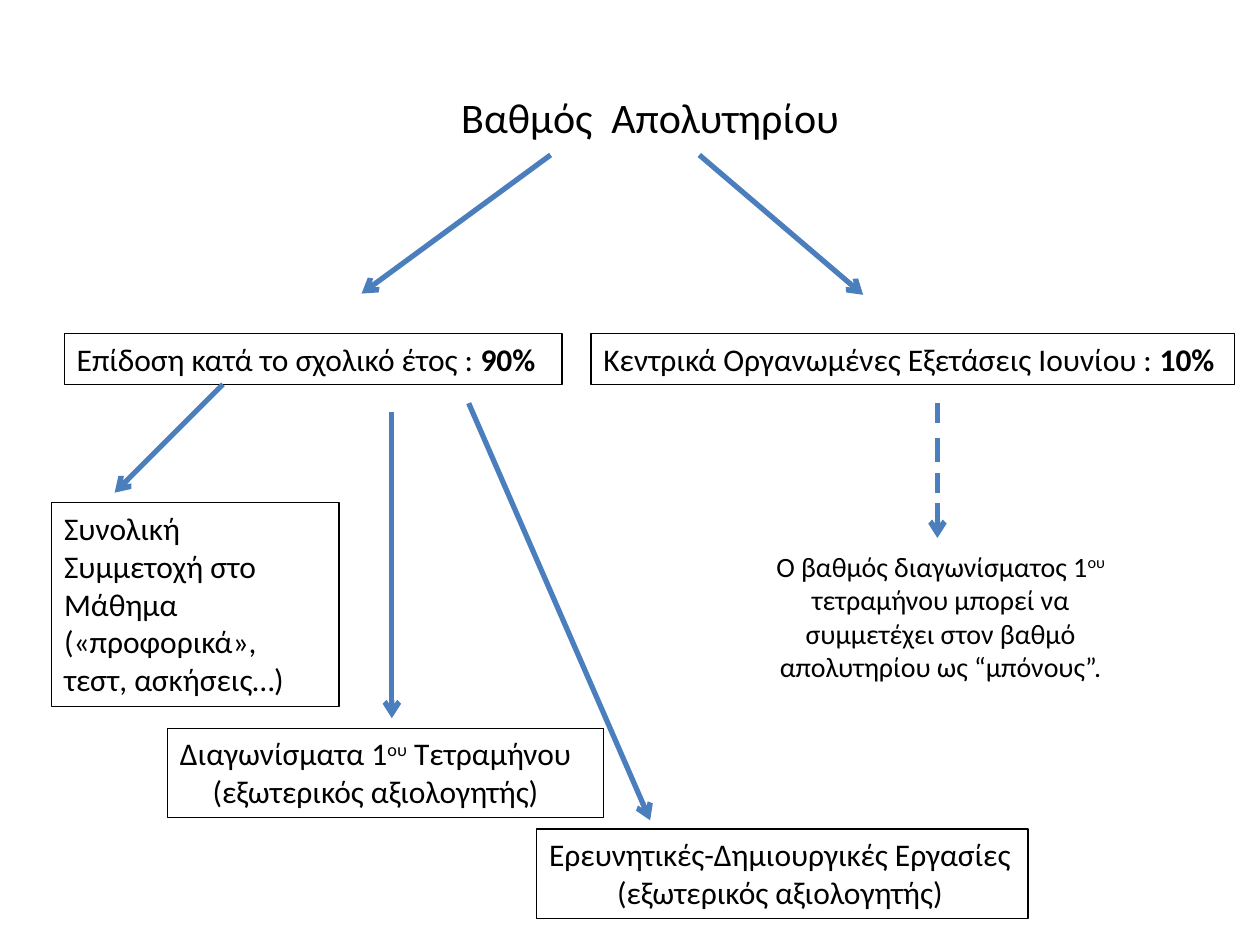
from lxml import etree
from pptx import Presentation
from pptx.dml.color import RGBColor
from pptx.enum.shapes import MSO_CONNECTOR
from pptx.enum.text import MSO_ANCHOR, MSO_AUTO_SIZE, PP_ALIGN
from pptx.oxml.ns import qn
from pptx.util import Inches, Pt

STRAIGHT = MSO_CONNECTOR.STRAIGHT
LEFT, CENTER = PP_ALIGN.LEFT, PP_ALIGN.CENTER
TOP, MIDDLE = MSO_ANCHOR.TOP, MSO_ANCHOR.MIDDLE
FIT, FIXED = MSO_AUTO_SIZE.SHAPE_TO_FIT_TEXT, MSO_AUTO_SIZE.NONE

FONT, INK, BLUE = "Calibri", "000000", "4B7EBC"
BOX_SIZE, NOTE_SIZE, TITLE_SIZE = 18, 16, 24

# A paragraph is (alignment, runs); a run is (text, style).
TITLE = [(CENTER, [("Βαθμός  Απολυτηρίου", "")])]
TITLE_AT = (3.35, 0.68, 3.62, 0.5)
ASSESSOR = (CENTER, [("(εξωτερικός αξιολογητής)", "")])

# place, wraps, paragraphs
BOXES = [
    ((0.51, 2.65, 3.95, 0.4), False,
     [(LEFT, [("Επίδοση κατά το σχολικό έτος : ", ""), ("90%", "bold")])]),
    ((4.69, 2.65, 5.11, 0.4), False,
     [(LEFT, [("Κεντρικά Οργανωμένες Εξετάσεις Ιουνίου : ", ""), ("10%", "bold")])]),
    ((0.41, 3.99, 2.28, 1.62), True,
     [(LEFT, [("Συνολική Συμμετοχή στο Μάθημα", "")]),
      (LEFT, [("(«προφορικά», τεστ, ασκήσεις…)", "")])]),
    ((1.33, 5.78, 3.46, 0.71), False,
     [(LEFT, [("Διαγωνίσματα 1", ""), ("ου", "super"), (" Τετραμήνου", "")]), ASSESSOR]),
    ((4.26, 6.58, 3.9, 0.71), False,
     [(LEFT, [("Ερευνητικές-Δημιουργικές Εργασίες", "")]), ASSESSOR]),
]

BONUS_AT = (6.02, 4.31, 2.89, 1.48)
BONUS = [(CENTER, [
    ("Ο βαθμός διαγωνίσματος 1", ""), ("ου", "super"),
    (" τετραμήνου μπορεί να συμμετέχει στον βαθμό απολυτηρίου ως “μπόνους”.", ""),
])]

ARROWS = [
    (4.37, 1.23, 2.87, 2.33),
    (5.55, 1.23, 6.85, 2.34),
    (1.77, 3.05, 0.91, 3.91),
    (3.11, 3.27, 3.11, 5.7),
    (3.72, 3.2, 5.16, 6.51),
]
BONUS_X = 7.44
BONUS_DASHES = [(3.2, 3.36), (3.48, 3.67), (3.75, 3.91), (3.99, 4.27)]


def rgb(value):
    return RGBColor.from_string(value)


def write(frame, paragraphs, size):
    for index, (alignment, runs) in enumerate(paragraphs):
        paragraph = frame.paragraphs[0] if index == 0 else frame.add_paragraph()
        paragraph.alignment = alignment
        for text, style in runs:
            run = paragraph.add_run()
            run.text = text
            run.font.name = FONT
            run.font.size = Pt(size)
            run.font.color.rgb = rgb(INK)
            if style == "bold":
                run.font.bold = True
            elif style == "super":
                run.font._element.set("baseline", "30000")


def add_text(slide, place, paragraphs, size, wraps=True):
    box = slide.shapes.add_textbox(*map(Inches, place))
    frame = box.text_frame
    frame.word_wrap = wraps
    frame.auto_size = FIXED if wraps else FIT
    frame.vertical_anchor = TOP
    write(frame, paragraphs, size)
    return box


def add_line(slide, ends, arrow=True):
    connector = slide.shapes.add_connector(STRAIGHT, *map(Inches, ends))
    connector.line.color.rgb = rgb(BLUE)
    connector.line.width = Pt(3)
    if arrow:
        etree.SubElement(connector.line._get_or_add_ln(), qn("a:tailEnd"), type="arrow")
    etree.SubElement(connector._element.spPr, qn("a:effectLst"))


def main():
    prs = Presentation()
    prs.slide_width, prs.slide_height = Inches(10), Inches(7.5)
    slide = prs.slides.add_slide(prs.slide_layouts.get_by_name("Title Only"))

    title = slide.shapes.title
    title.left, title.top, title.width, title.height = map(Inches, TITLE_AT)
    title.text_frame.auto_size = FIXED
    title.text_frame.vertical_anchor = MIDDLE
    write(title.text_frame, TITLE, TITLE_SIZE)

    for place, wraps, paragraphs in BOXES:
        box = add_text(slide, place, paragraphs, BOX_SIZE, wraps)
        box.line.color.rgb = rgb(INK)
        box.line.width = Pt(0.75)
    add_text(slide, BONUS_AT, BONUS, NOTE_SIZE)

    for ends in ARROWS:
        add_line(slide, ends)
    for start, end in BONUS_DASHES:
        is_last = (start, end) == BONUS_DASHES[-1]
        add_line(slide, (BONUS_X, start, BONUS_X, end), arrow=is_last)

    prs.save("out.pptx")


if __name__ == "__main__":
    main()
